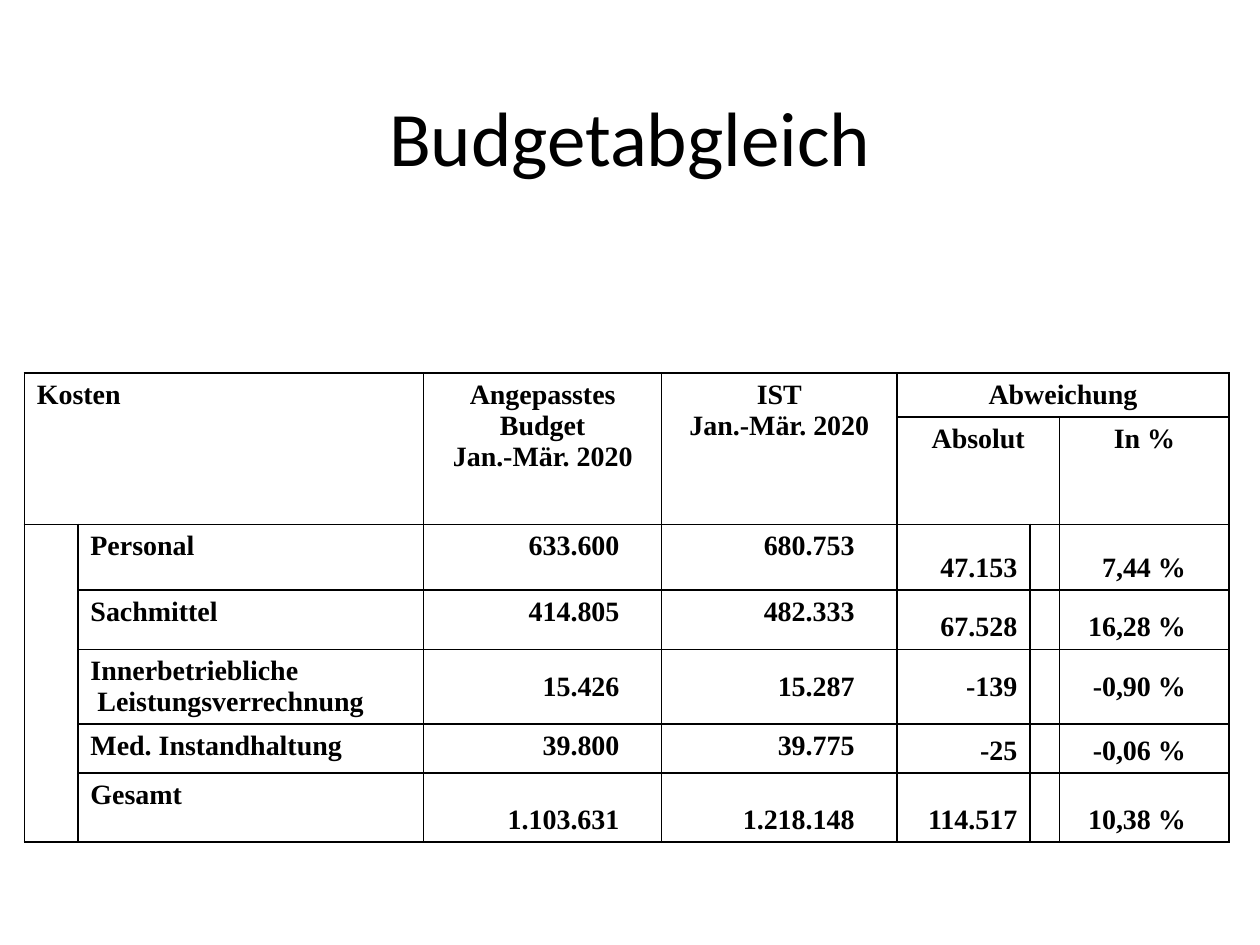
from lxml.etree import SubElement, Element
from pptx import Presentation
from pptx.dml.color import RGBColor
from pptx.enum.text import MSO_ANCHOR as Anchor, PP_ALIGN as Align
from pptx.oxml.ns import qn
from pptx.util import Cm, Pt

BLACK = RGBColor(0, 0, 0)
WHITE = RGBColor(255, 255, 255)
TOP, MIDDLE, BOTTOM = Anchor.TOP, Anchor.MIDDLE, Anchor.BOTTOM

TITLE = "Budgetabgleich"
COLUMN_WIDTHS = [1.08, 6.97, 4.2, 0.6, 4.14, 0.6, 2.68, 0.6, 2.8, 0.62]
ROW_HEIGHTS = [0.89, 2.13, 1.32, 1.2, 1.51, 0.98, 1.4]
HEADINGS = [
    (0, 0, 2, 2, "Kosten", Align.LEFT),
    (0, 2, 2, 2, "Angepasstes\n Budget \nJan.-Mär. 2020", Align.CENTER),
    (0, 4, 2, 2, "IST\nJan.-Mär. 2020", Align.CENTER),
    (0, 6, 1, 4, "Abweichung", Align.CENTER),
    (1, 6, 1, 2, "Absolut", Align.CENTER),
    (1, 8, 1, 2, "In %", Align.CENTER),
    (2, 0, 5, 1, "", Align.LEFT),
]
COSTS = [
    ("Personal", "633.600", "680.753", "47.153", "7,44 %", TOP, BOTTOM),
    ("Sachmittel", "414.805", "482.333", "67.528", "16,28 %", TOP, BOTTOM),
    ("Innerbetriebliche\n Leistungsverrechnung", "15.426", "15.287", "-139", "-0,90 %", MIDDLE, MIDDLE),
    ("Med. Instandhaltung", "39.800", "39.775", "-25", "-0,06 %", TOP, BOTTOM),
    ("Gesamt", "1.103.631", "1.218.148", "114.517", "10,38 %", BOTTOM, BOTTOM),
]


def write(frame, text, *, font, size, bold=False, align=Align.LEFT, hanging=0):
    for number, line in enumerate(text.split("\n")):
        paragraph = frame.add_paragraph() if number else frame.paragraphs[0]
        paragraph.alignment = align
        if hanging:
            properties = paragraph._p.get_or_add_pPr()
            properties.set("marL", str(Cm(hanging)))
            properties.set("indent", str(-Cm(hanging)))
        run = paragraph.add_run()
        run.text = line
        run.font.name, run.font.size, run.font.bold = font, Pt(size), bold
        run.font.color.rgb = BLACK


def set_borders(cell, edges):
    properties = cell._tc.get_or_add_tcPr()
    for position, (side, visible) in enumerate(edges.items()):
        border = Element(qn(f"a:ln{side}"), w=str(Pt(1)))
        if visible:
            solid = SubElement(border, qn("a:solidFill"))
            SubElement(solid, qn("a:srgbClr"), val=str(BLACK))
        else:
            SubElement(border, qn("a:noFill"))
        properties.insert(position, border)


def fill_block(table, row, column, rows, columns, text, align, anchor=TOP, merged=True):
    for r in range(rows):
        for c in range(columns):
            cell = table.cell(row + r, column + c)
            cell.fill.solid()
            cell.fill.fore_color.rgb = WHITE
            set_borders(cell, {"L": merged or c == 0, "R": merged or c == columns - 1,
                               "T": True, "B": True})
            if r or c or not text:
                cell.margin_left = cell.margin_right = cell.margin_top = cell.margin_bottom = 0
    first = table.cell(row, column)
    if merged and rows * columns > 1:
        first.merge(table.cell(row + rows - 1, column + columns - 1))
    if text:
        first.vertical_anchor = anchor
        if anchor == TOP:
            first.margin_bottom = 0
        write(first.text_frame, text, font="Times New Roman", size=16, bold=True,
              align=align, hanging=1.7)


def main():
    deck = Presentation()
    deck.slide_width, deck.slide_height = Cm(25.4), Cm(19.05)
    slide = deck.slides.add_slide(deck.slide_layouts[6])

    heading = slide.shapes.add_textbox(Cm(1.27), Cm(0.81), Cm(22.86), Cm(3.84)).text_frame
    heading.word_wrap = True
    heading.vertical_anchor = MIDDLE
    write(heading, TITLE, font="Calibri", size=44, align=Align.CENTER)

    table = slide.shapes.add_table(
        len(ROW_HEIGHTS), len(COLUMN_WIDTHS), Cm(0.49), Cm(7.52),
        Cm(sum(COLUMN_WIDTHS)), Cm(sum(ROW_HEIGHTS))).table
    table.first_row = table.horz_banding = False
    for column, width in zip(table.columns, COLUMN_WIDTHS):
        column.width = Cm(width)
    for row, height in zip(table.rows, ROW_HEIGHTS):
        row.height = Cm(height)

    for block in HEADINGS:
        fill_block(table, *block)
    for row, (label, budget, actual, absolute, percent, cost_anchor, gap_anchor) in enumerate(COSTS, 2):
        fill_block(table, row, 1, 1, 1, label, Align.LEFT)
        for column, columns, amount, anchor in [
            (2, 2, budget, cost_anchor),
            (4, 2, actual, cost_anchor),
            (6, 1, absolute, gap_anchor),
            (7, 1, "", gap_anchor),
            (8, 2, percent, gap_anchor),
        ]:
            fill_block(table, row, column, 1, columns, amount, Align.RIGHT, anchor, merged=False)

    deck.save("out.pptx")


if __name__ == "__main__":
    main()
